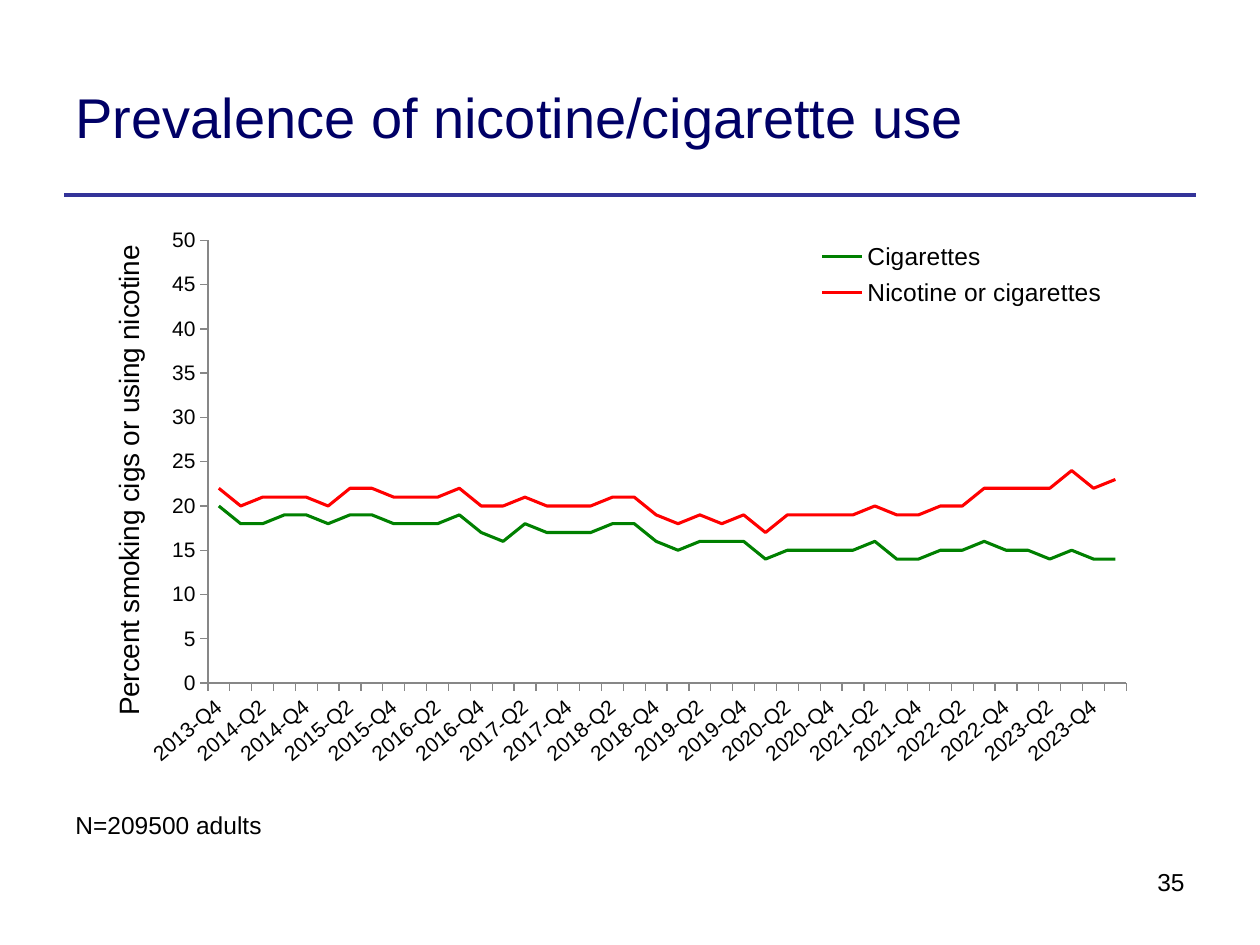
"""Build the slide on prevalence of nicotine and cigarette use."""
from dataclasses import dataclass
from typing import Any

from lxml.etree import SubElement
from pptx import Presentation
from pptx.chart.data import CategoryChartData
from pptx.dml.color import RGBColor
from pptx.enum.chart import XL_CHART_TYPE, XL_LEGEND_POSITION, XL_MARKER_STYLE, XL_TICK_MARK
from pptx.enum.shapes import MSO_CONNECTOR
from pptx.enum.text import MSO_ANCHOR, PP_ALIGN
from pptx.oxml import parse_xml
from pptx.oxml.ns import nsdecls, qn
from pptx.util import Inches, Pt


@dataclass(frozen=True)
class Theme:
    """Colours, font and type sizes of the slide."""
    font: str = "Arial"
    heading: str = "000066"
    rule: str = "333399"
    ink: str = "000000"
    axis: str = "878787"
    heading_size: float = 32
    axis_title_size: float = 16
    note_size: float = 14
    tick_size: float = 12
    rule_width: float = 2.25
    trend_width: float = 1.75
    axis_width: float = 0.75


@dataclass(frozen=True)
class Trend:
    """One line of the chart."""
    name: str
    color: str
    values: tuple[int, ...]


@dataclass(frozen=True)
class Note:
    """A short text with its place in inches."""
    words: str
    left: float
    top: float
    width: float
    height: float
    align: PP_ALIGN
    wrap: bool


THEME = Theme()
QUARTERS = [f"{n // 4}-Q{n % 4 + 1}" for n in range(2013 * 4 + 3, 2024 * 4 + 1)]
TRENDS = (
    Trend("Cigarettes", "008000", (
        20, 18, 18, 19, 19, 18, 19, 19, 18, 18, 18, 19, 17, 16,
        18, 17, 17, 17, 18, 18, 16, 15, 16, 16, 16, 14, 15, 15,
        15, 15, 16, 14, 14, 15, 15, 16, 15, 15, 14, 15, 14, 14)),
    Trend("Nicotine or cigarettes", "FF0000", (
        22, 20, 21, 21, 21, 20, 22, 22, 21, 21, 21, 22, 20, 20,
        21, 20, 20, 20, 21, 21, 19, 18, 19, 18, 19, 17, 19, 19,
        19, 19, 20, 19, 19, 20, 20, 22, 22, 22, 22, 24, 22, 23)),
)
NOTES = (
    Note("35", 6.73, 6.83, 2.77, 0.52, PP_ALIGN.RIGHT, True),
    Note("N=209500 adults", 0.5, 6.38, 1.69, 0.34, PP_ALIGN.LEFT, False),
)


def style_font(font: Any, size: float, color: str = THEME.ink) -> None:
    """Apply the theme font with a size and a colour."""
    font.name = THEME.font
    font.size = Pt(size)
    font.bold = False
    font.color.rgb = RGBColor.from_string(color)


def style_line(line: Any, color: str, width: float) -> None:
    """Give a line a solid colour and a width."""
    line.color.rgb = RGBColor.from_string(color)
    line.width = Pt(width)


def set_layout(part: Any, index: int, **fractions: float) -> None:
    """Place a chart part by fractions of the chart area."""
    for former in part.findall(qn("c:layout")):
        part.remove(former)
    layout = parse_xml(f"<c:layout {nsdecls('c')}><c:manualLayout/></c:layout>")
    manual = layout[0]
    if part.tag == qn("c:plotArea"):
        SubElement(manual, qn("c:layoutTarget"), val="inner")
    for side in ("xMode", "yMode"):
        SubElement(manual, qn(f"c:{side}"), val="edge")
    for key, fraction in fractions.items():
        SubElement(manual, qn(f"c:{key}"), val=str(fraction))
    part.insert(index, layout)


def style_axis(axis: Any) -> None:
    """Format an axis with outside ticks and no gridlines."""
    axis.has_major_gridlines = False
    axis.major_tick_mark = XL_TICK_MARK.OUTSIDE
    axis.minor_tick_mark = XL_TICK_MARK.NONE
    style_font(axis.tick_labels.font, THEME.tick_size)
    style_line(axis.format.line, THEME.axis, THEME.axis_width)


def add_heading(slide: Any, words: str) -> None:
    """Fill and place the title placeholder."""
    heading = slide.shapes.title
    heading.left, heading.top = Inches(0.5), Inches(0.3)
    heading.width, heading.height = Inches(7.89), Inches(1.25)
    heading.text_frame.vertical_anchor = MSO_ANCHOR.MIDDLE
    paragraph = heading.text_frame.paragraphs[0]
    paragraph.alignment = PP_ALIGN.LEFT
    run = paragraph.add_run()
    run.text = words
    style_font(run.font, THEME.heading_size, THEME.heading)


def add_rule(slide: Any) -> None:
    """Draw the rule below the heading."""
    rule = slide.shapes.add_connector(
        MSO_CONNECTOR.STRAIGHT, Inches(0.51), Inches(1.55), Inches(9.49), Inches(1.55))
    style_line(rule.line, THEME.rule, THEME.rule_width)
    SubElement(rule._element.spPr, qn("a:effectLst"))


def add_note(slide: Any, note: Note) -> None:
    """Add a short text."""
    frame = slide.shapes.add_textbox(
        Inches(note.left), Inches(note.top), Inches(note.width), Inches(note.height)).text_frame
    frame.word_wrap = note.wrap
    paragraph = frame.paragraphs[0]
    paragraph.alignment = note.align
    run = paragraph.add_run()
    run.text = note.words
    style_font(run.font, THEME.note_size)


def add_trend_chart(slide: Any) -> None:
    """Add the line chart of quarterly prevalence."""
    prevalence = CategoryChartData(number_format="General")
    prevalence.categories = QUARTERS
    for trend in TRENDS:
        prevalence.add_series(trend.name, trend.values)
    chart = slide.shapes.add_chart(
        XL_CHART_TYPE.LINE, Inches(0.48), Inches(1.71), Inches(9), Inches(4.95), prevalence).chart
    chart.has_title = False
    style_font(chart.font, 18)
    chart.plots[0].vary_by_categories = False
    for series, trend in zip(chart.plots[0].series, TRENDS):
        series.smooth = False
        series.marker.style = XL_MARKER_STYLE.NONE
        style_line(series.format.line, trend.color, THEME.trend_width)

    quarter_axis, percent_axis = chart.category_axis, chart.value_axis
    for axis in (quarter_axis, percent_axis):
        style_axis(axis)
    quarter_labels = quarter_axis._element.find(qn("c:txPr")).find(qn("a:bodyPr"))
    quarter_labels.set("rot", "-2400000")
    label_skip = parse_xml(f'<c:tickLblSkip {nsdecls("c")} val="2"/>')
    quarter_axis._element.find(qn("c:noMultiLvlLbl")).addprevious(label_skip)
    percent_axis.minimum_scale, percent_axis.maximum_scale = 0, 50
    percent_axis.major_unit = 5

    percent_frame = percent_axis.axis_title.text_frame
    percent_frame._txBody.find(qn("a:bodyPr")).set("rot", "-5400000")
    run = percent_frame.paragraphs[0].add_run()
    run.text = "Percent smoking cigs or using nicotine"
    style_font(run.font, THEME.axis_title_size)

    chart.has_legend = True
    chart.legend.position = XL_LEGEND_POSITION.RIGHT
    chart.legend.include_in_layout = False
    style_font(chart.legend.font, THEME.note_size)

    plot_area = chart._chartSpace.find(qn("c:chart")).find(qn("c:plotArea"))
    set_layout(plot_area, 0, x=0.13, y=0.04, w=0.81, h=0.71)
    set_layout(percent_axis.axis_title._element, 1, x=0.04, y=0.04)
    set_layout(chart.legend._element, 1, x=0.66, y=0.03, w=0.27, h=0.13)


def main() -> None:
    """Build and save the slide."""
    presentation = Presentation()
    presentation.slide_width, presentation.slide_height = Inches(10), Inches(7.5)
    slide = presentation.slides.add_slide(presentation.slide_layouts[5])
    add_heading(slide, "Prevalence of nicotine/cigarette use")
    add_rule(slide)
    add_trend_chart(slide)
    for note in NOTES:
        add_note(slide, note)
    presentation.save("out.pptx")


if __name__ == "__main__":
    main()
